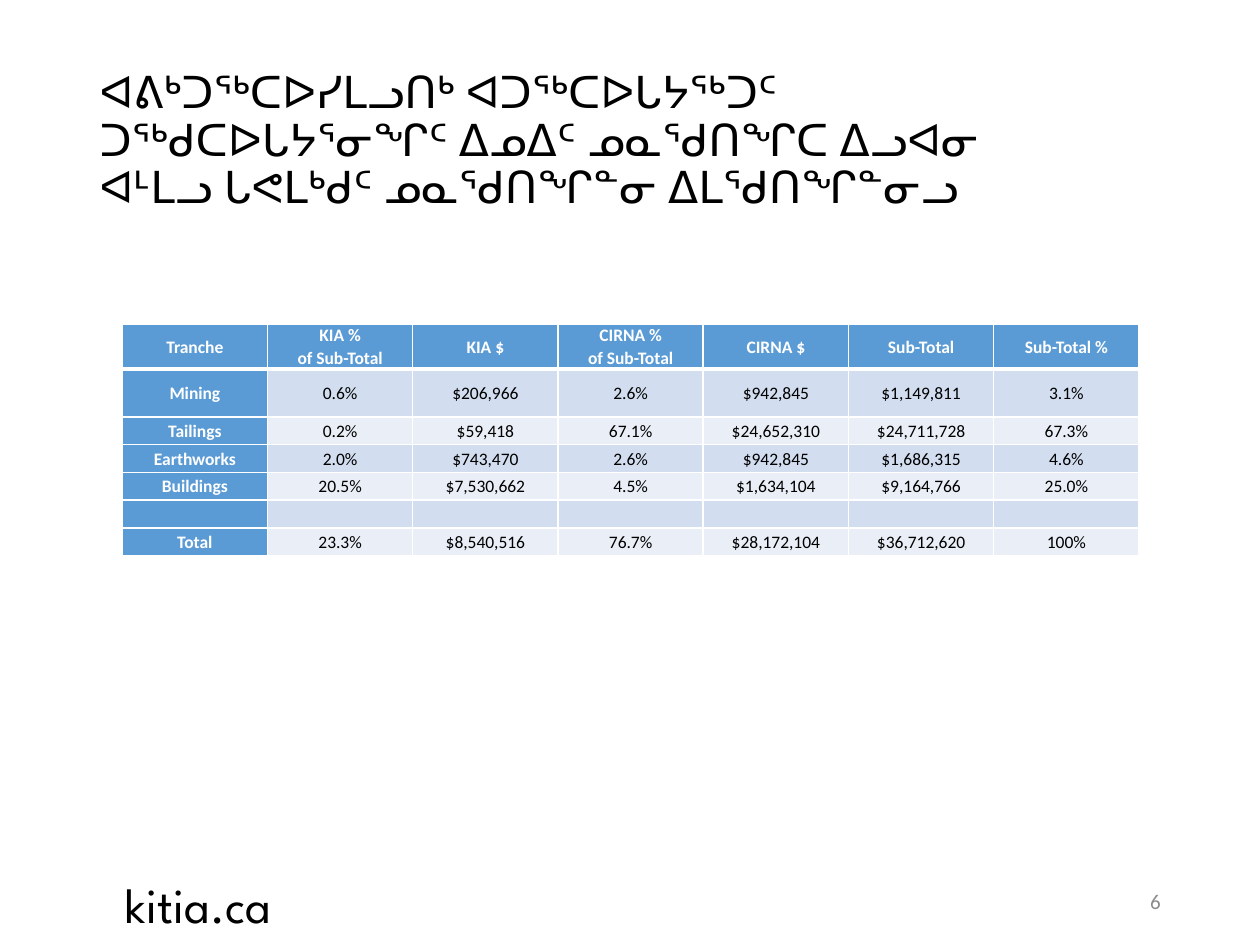
from lxml.etree import SubElement
from pptx import Presentation
from pptx.dml.color import RGBColor
from pptx.enum.text import MSO_ANCHOR as Anchor, MSO_AUTO_SIZE as AutoSize, PP_ALIGN as Align
from pptx.oxml.ns import qn
from pptx.util import Inches, Pt

TITLE = "ᐊᕕᒃᑐᖅᑕᐅᓯᒪᓗᑎᒃ ᐊᑐᖅᑕᐅᒐᔭᖅᑐᑦ ᑐᖅᑯᑕᐅᒐᔭᕐᓂᖏᑦ ᐃᓄᐃᑦ ᓄᓇᖁᑎᖏᑕ ᐃᓗᐊᓂ ᐊᒻᒪᓗ ᒐᕙᒪᒃᑯᑦ ᓄᓇᖁᑎᖏᓐᓂ ᐃᒪᖁᑎᖏᓐᓂᓗ"
ROWS = [
    ["Tranche", "KIA %\nof Sub-Total", "KIA $", "CIRNA %\nof Sub-Total", "CIRNA $", "Sub-Total", "Sub-Total %"],
    ["Mining", "0.6%", "$206,966", "2.6%", "$942,845", "$1,149,811", "3.1%"],
    ["Tailings", "0.2%", "$59,418", "67.1%", "$24,652,310", "$24,711,728", "67.3%"],
    ["Earthworks", "2.0%", "$743,470", "2.6%", "$942,845", "$1,686,315", "4.6%"],
    ["Buildings", "20.5%", "$7,530,662", "4.5%", "$1,634,104", "$9,164,766", "25.0%"],
    [""] * 7,
    ["Total", "23.3%", "$8,540,516", "76.7%", "$28,172,104", "$36,712,620", "100%"],
]
ROW_HEIGHTS = [0.36, 0.38] + [0.22] * 5
HEADING = "5B9BD5"
BANDS = ["EAEFF7", "D2DEEF"]


def color(value):
    return RGBColor.from_string(value)


def apply(target, formats):
    for name, value in formats.items():
        setattr(target, name, value)


def write(frame, text, font, ink, paragraph):
    for index, line in enumerate(text.split("\n")):
        para = frame.paragraphs[0] if index == 0 else frame.add_paragraph()
        apply(para, paragraph)
        if line:
            span = para.add_run()
            span.text = line
            apply(span.font, font)
            span.font.color.rgb = color(ink)
        else:
            para._p.get_or_add_endParaRPr().set("sz", str(font["size"].centipoints))


def add_label(page, place, text, font, ink, paragraph, anchor):
    box = page.shapes.add_textbox(*map(Inches, place))
    apply(box.text_frame, {"word_wrap": True, "vertical_anchor": anchor})
    write(box.text_frame, text, font, ink, paragraph)


def add_title(page):
    title = page.shapes.title
    apply(title, {"left": Inches(0.69), "top": Inches(0.4), "width": Inches(7.22), "height": Inches(1.45)})
    apply(title.text_frame, {"word_wrap": True, "auto_size": AutoSize.NONE, "vertical_anchor": Anchor.MIDDLE})
    write(title.text_frame, TITLE, {"name": "Lato", "size": Pt(25.2)}, "000000",
          {"alignment": Align.LEFT, "line_spacing": 0.9})


def set_borders(cell, top, bottom):
    properties = cell._tc.get_or_add_tcPr()
    for side, width in {"lnL": 1, "lnR": 1, "lnT": top, "lnB": bottom}.items():
        line = SubElement(properties, qn(f"a:{side}"), w=str(Pt(width)))
        fill = SubElement(line, qn("a:solidFill"))
        SubElement(fill, qn("a:srgbClr"), val="FFFFFF")


def format_cell(cell, text, row, column):
    heading = row == 0 or column == 0
    set_borders(cell, 3 if row == 1 else 1, 3 if row == 0 else 1)
    cell.fill.solid()
    cell.fill.fore_color.rgb = color(HEADING if heading else BANDS[row % 2])
    apply(cell, {"vertical_anchor": Anchor.MIDDLE, "margin_left": Inches(0.07),
                 "margin_right": Inches(0.07), "margin_top": 0, "margin_bottom": 0})
    write(cell.text_frame, text, {"name": "Calibri", "size": Pt(10), "bold": heading},
          "FFFFFF" if heading else "000000", {"alignment": Align.CENTER, "line_spacing": 1.07})


def add_cost_table(page):
    place = map(Inches, (0.97, 2.57, 8.07, sum(ROW_HEIGHTS)))
    table = page.shapes.add_table(len(ROWS), len(ROWS[0]), *place).table
    for row, texts in enumerate(ROWS):
        table.rows[row].height = Inches(ROW_HEIGHTS[row])
        for column, text in enumerate(texts):
            format_cell(table.cell(row, column), text, row, column)


def main():
    deck = Presentation()
    apply(deck, {"slide_width": Inches(10), "slide_height": Inches(7.5)})
    page = deck.slides.add_slide(deck.slide_layouts[5])
    add_label(page, (0.9, 6.89, 2.42, 0.57), "kitia.ca", {"name": "League Spartan", "size": Pt(28)},
              "000000", {"alignment": Align.LEFT}, Anchor.TOP)
    add_title(page)
    add_label(page, (7.06, 6.95, 2.25, 0.4), "6", {"name": "Calibri", "size": Pt(12)},
              "8C8C8C", {"alignment": Align.RIGHT}, Anchor.MIDDLE)
    add_cost_table(page)
    deck.save("out.pptx")


if __name__ == "__main__":
    main()
